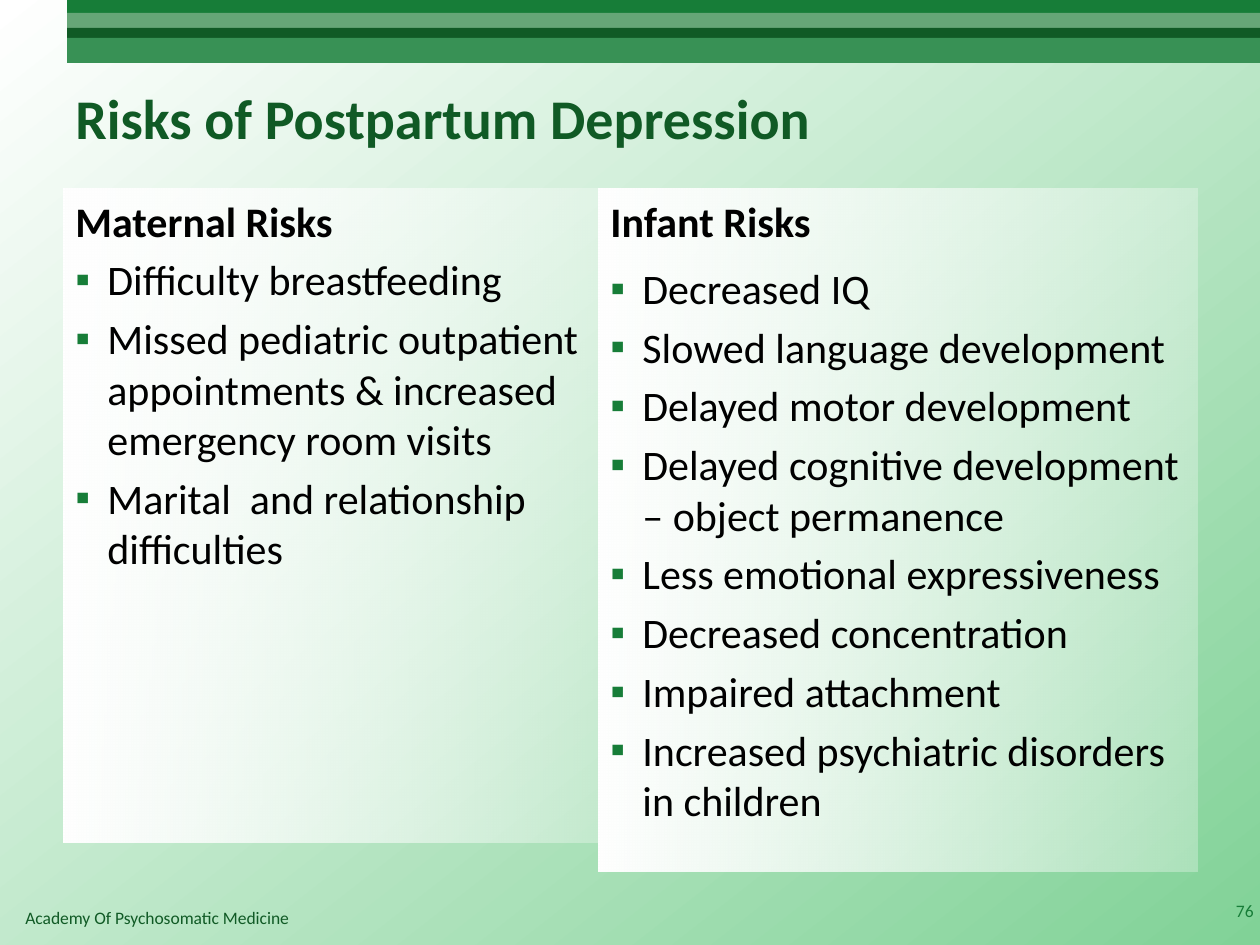
from dataclasses import dataclass

from lxml import etree
from pptx import Presentation
from pptx.dml.color import RGBColor
from pptx.enum.shapes import MSO_SHAPE
from pptx.enum.text import MSO_ANCHOR, PP_ALIGN
from pptx.oxml.ns import qn
from pptx.util import Emu, Pt

RECT = MSO_SHAPE.RECTANGLE
TOP, MIDDLE = MSO_ANCHOR.TOP, MSO_ANCHOR.MIDDLE
LEFT, RIGHT = PP_ALIGN.LEFT, PP_ALIGN.RIGHT

EMU_PER_PX = 914400 / 126
FONT = "Calibri"
INDENT = 32
BODY_SIZE = 24
PARAGRAPH_GAP = 4.8  # 20 % of the body size
COLORS = {
    "white": "FFFFFF",
    "black": "000000",
    "mint": "81D297",
    "green": "177D38",
    "sage": "66A677",
    "dark": "105A25",
    "mid": "389155",
}


@dataclass
class Box:
    x: int
    y: int
    w: int
    h: int


@dataclass
class Band:
    height: int
    color: str


@dataclass
class Panel:
    box: Box
    heading: str
    items: list[str]
    heading_after: float = 0


BANDS = [Band(13, "green"), Band(15, "sage"), Band(10, "dark"), Band(25, "mid")]

PANELS = [
    Panel(Box(63, 189, 538, 654), "Maternal Risks", [
        "Difficulty breastfeeding",
        "Missed pediatric outpatient appointments & increased emergency room visits",
        "Marital  and relationship difficulties",
    ]),
    Panel(Box(598, 189, 599, 683), "Infant Risks", [
        "Decreased IQ",
        "Slowed language development",
        "Delayed motor development",
        "Delayed cognitive development – object permanence",
        "Less emotional expressiveness",
        "Decreased concentration",
        "Impaired attachment",
        "Increased psychiatric disorders in children",
    ], heading_after=PARAGRAPH_GAP),
]


def px(n: int) -> Emu:
    return Emu(round(n * EMU_PER_PX))


def rgb(name: str) -> RGBColor:
    return RGBColor.from_string(COLORS[name])


def place(box: Box) -> tuple:
    return px(box.x), px(box.y), px(box.w), px(box.h)


def set_gradient(fill, start: str, end: str, angle: int) -> None:
    fill.gradient()
    fill.gradient_angle = angle
    for stop, name in zip(fill.gradient_stops, (start, end)):
        stop.color.rgb = rgb(name)


def add_rect(slide, box: Box):
    sp = slide.shapes.add_shape(RECT, *place(box))
    sp.shadow.inherit = False
    sp.line.fill.background()
    return sp


def add_bullet(p) -> None:
    pPr = p._p.get_or_add_pPr()
    color = etree.SubElement(pPr, qn("a:buClr"))
    etree.SubElement(color, qn("a:srgbClr"), val=COLORS["green"])
    etree.SubElement(pPr, qn("a:buFont"), typeface="Arial")
    etree.SubElement(pPr, qn("a:buChar"), char="▪")


def write(p, text: str, *, size: int, color: str, bold: bool = False, align=LEFT) -> None:
    p.alignment = align
    r = p.add_run()
    r.text = text
    r.font.name = FONT
    r.font.size = Pt(size)
    r.font.bold = bold
    r.font.color.rgb = rgb(color)


def add_text(slide, box: Box, text: str, anchor=TOP, **fmt) -> None:
    tf = slide.shapes.add_textbox(*place(box)).text_frame
    tf.word_wrap = True
    tf.vertical_anchor = anchor
    write(tf.paragraphs[0], text, **fmt)


def add_panel(slide, panel: Panel) -> None:
    sp = add_rect(slide, panel.box)
    set_gradient(sp.fill, "white", "white", 0)
    # The right end of the fill fades to 30 % opacity
    end_color = sp._element.spPr.findall(".//" + qn("a:srgbClr"))[-1]
    etree.SubElement(end_color, qn("a:alpha"), val="30000")

    tf = sp.text_frame
    tf.word_wrap = True
    tf.vertical_anchor = TOP
    p = tf.paragraphs[0]
    p.space_after = Pt(panel.heading_after)
    write(p, panel.heading, size=BODY_SIZE, color="black", bold=True)
    for item in panel.items:
        p = tf.add_paragraph()
        p.space_before = Pt(PARAGRAPH_GAP)
        pPr = p._p.get_or_add_pPr()
        pPr.set("marL", str(px(INDENT)))
        pPr.set("indent", str(-px(INDENT)))
        add_bullet(p)
        write(p, item, size=BODY_SIZE, color="black")


def main() -> None:
    prs = Presentation()
    prs.slide_width, prs.slide_height = px(1260), px(945)
    slide = prs.slides.add_slide(prs.slide_layouts[6])

    # Background: python-pptx angles run counter-clockwise
    set_gradient(slide.background.fill, "white", "mint", 360 - 52)

    # Header bands, stacked from the top edge
    y = 0
    for band in BANDS:
        sp = add_rect(slide, Box(67, y, 1193, band.height))
        sp.fill.solid()
        sp.fill.fore_color.rgb = rgb(band.color)
        y += band.height

    # Footer and title
    add_text(slide, Box(13, 901, 874, 34), "Academy Of Psychosomatic Medicine",
             size=10, color="dark")
    add_text(slide, Box(63, 38, 1134, 158), "Risks of Postpartum Depression",
             anchor=MIDDLE, size=32, color="dark", bold=True)

    # Risk panels
    for panel in PANELS:
        add_panel(slide, panel)

    # Slide number
    add_text(slide, Box(1216, 886, 50, 50), "76", anchor=MIDDLE,
             size=10, color="green", align=RIGHT)

    prs.save("out.pptx")


if __name__ == "__main__":
    main()
